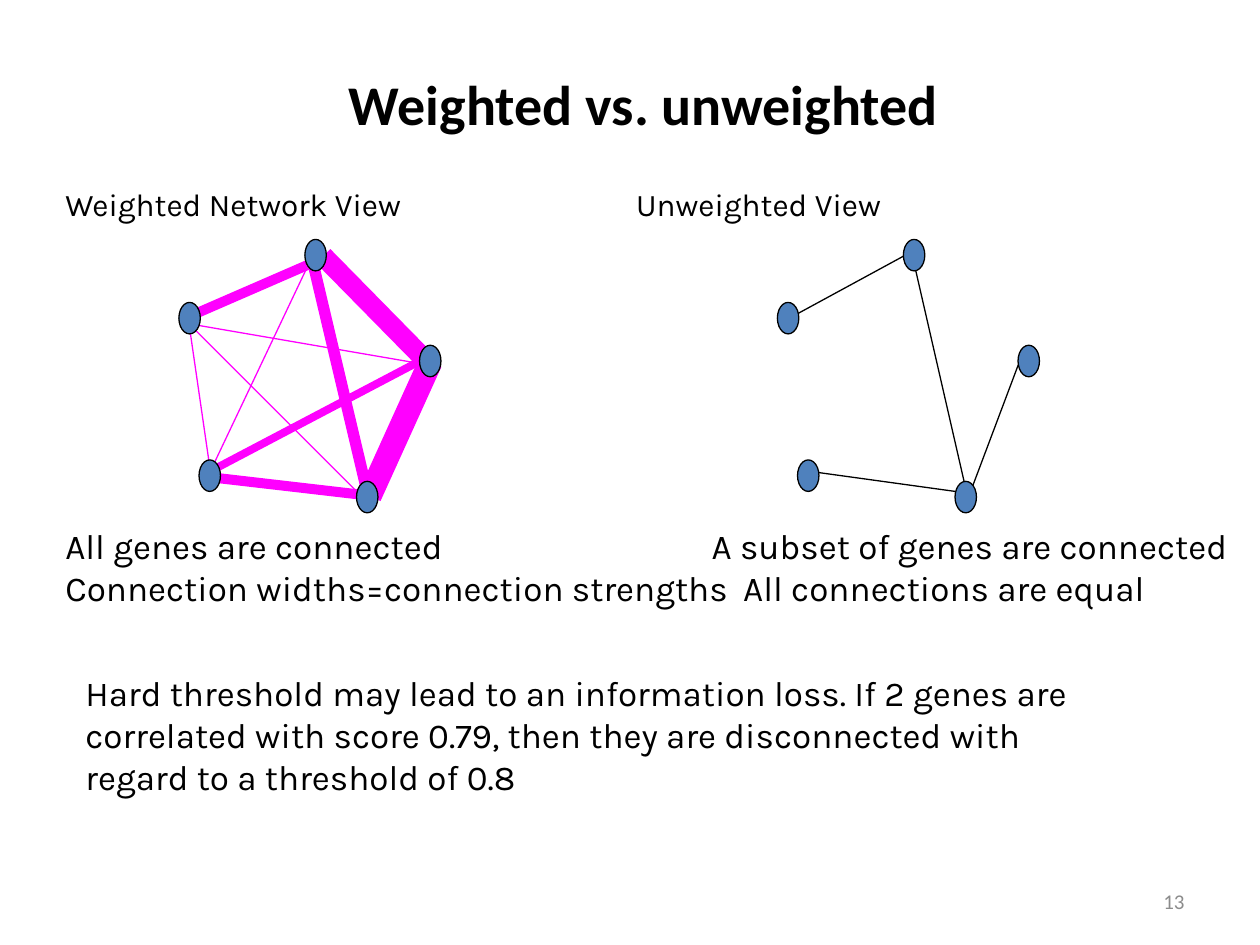
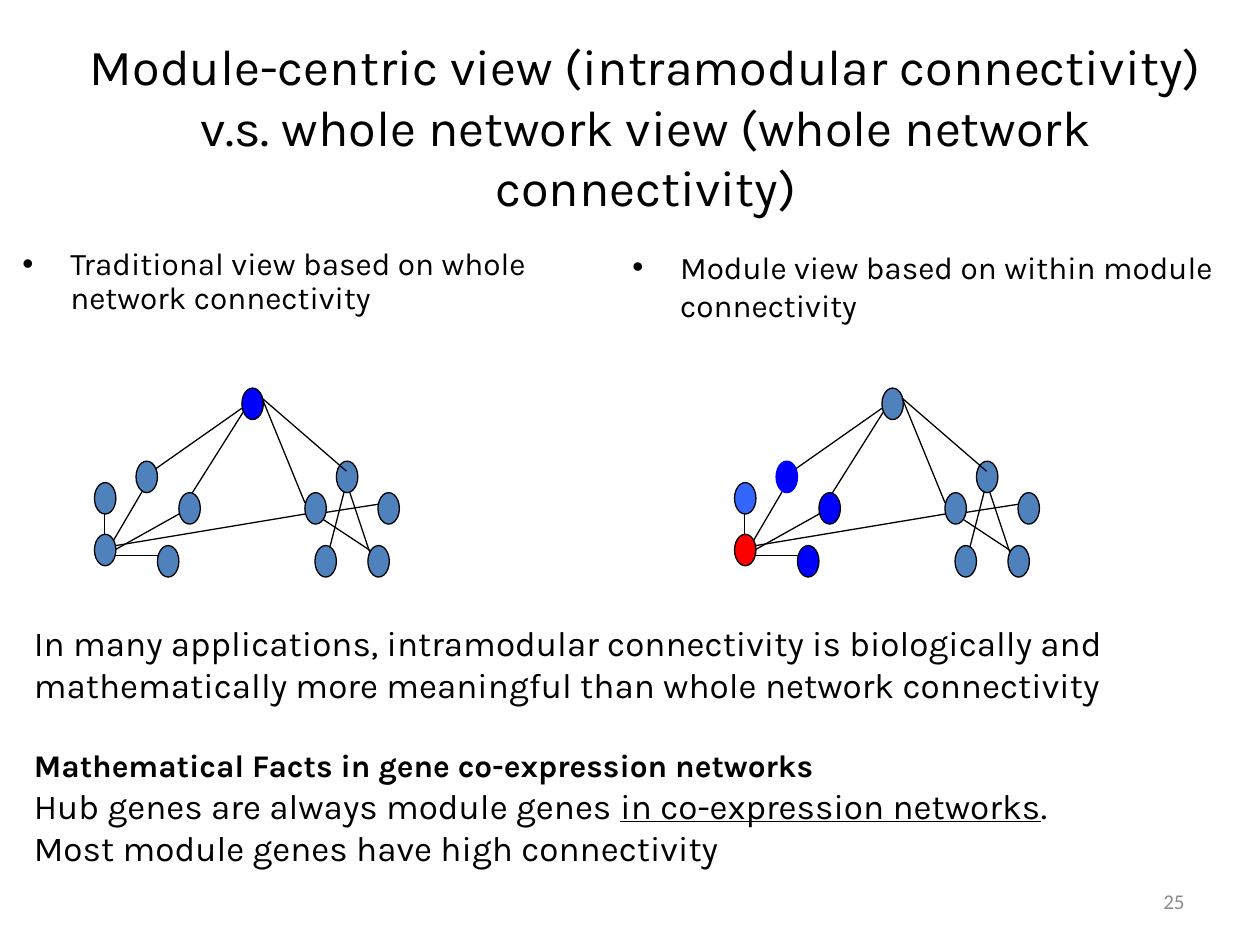
"""Build two slides on weighted networks and module-centric connectivity."""
from lxml import etree
from pptx import Presentation
from pptx.dml import color
from pptx.enum import shapes, text
from pptx.oxml import ns
from pptx.util import Inches, Pt

BLACK, GRAY, STEEL = "000000", "8C8C8C", "4F81BD"
PINK, BLUE, SKY, RED = "FF00FF", "0000FF", "3366FF", "FF0000"
hue = color.RGBColor.from_string


def write(slide, box, rows, size, font="Karla", tone=BLACK, align=None,
          anchor=text.MSO_ANCHOR.TOP, bullet=False):
    """Add a text box with one paragraph per row and return its paragraphs."""
    frame = slide.shapes.add_textbox(*map(Inches, box)).text_frame
    frame.word_wrap = True
    frame.vertical_anchor = anchor
    for i, row in enumerate(rows):
        para = frame.add_paragraph() if i else frame.paragraphs[0]
        para.text = row
        para.alignment = align
        if bullet:
            props = para._p.get_or_add_pPr()
            props.set("marL", str(Inches(0.38)))
            props.set("indent", str(-Inches(0.38)))
            etree.SubElement(props, ns.qn("a:buFont")).set("typeface", "Arial")
            etree.SubElement(props, ns.qn("a:buChar")).set("char", "•")
        para.font.name = font
        para.font.size = Pt(size)
        para.font.color.rgb = hue(tone)
    return frame.paragraphs


def link(slide, dx, ends, tone, width=0.75):
    """Draw a straight edge moved right by dx."""
    x1, y1, x2, y2 = ends
    edge = slide.shapes.add_connector(
        shapes.MSO_CONNECTOR.STRAIGHT,
        *map(Inches, (x1 + dx, y1, x2 + dx, y2)))
    edge.line.color.rgb = hue(tone)
    edge.line.width = Pt(width)
    etree.SubElement(edge._element.spPr, ns.qn("a:effectLst"))


deck = Presentation()
deck.slide_width, deck.slide_height = Inches(10), Inches(7.5)
first, second = [deck.slides.add_slide(deck.slide_layouts[6]) for _ in range(2)]

genes = [(1.42, 2.4), (2.83, 3.82), (1.58, 3.65), (3.33, 2.74), (2.42, 1.9)]
thin = [(1.5, 2.57, 1.67, 3.74), (1.5, 2.57, 2.92, 3.99),
        (1.5, 2.57, 3.42, 2.9), (1.67, 3.74, 2.5, 1.99)]
bars = [(1.5, 2.24, 1.07, 0.08, 336.5), (2.39, 2.37, 1.17, 0.16, 45.5),
        (1.68, 3.82, 1.23, 0.08, 6.6), (1.72, 3.02, 1.99, 0.09, 76.7),
        (2.59, 3.31, 1.17, 0.19, 114.4)]
kept = [(1.67, 3.74, 2.83, 3.9), (3.33, 2.9, 2.92, 3.99),
        (1.58, 2.49, 2.5, 1.99), (2.5, 2.07, 2.92, 3.9)]

hubs = [(0.75, 4.24), (0.75, 3.83), (1.08, 3.66), (1.25, 4.33), (1.42, 3.91),
        (2.42, 3.91), (2.92, 4.33), (2.5, 4.33), (2.67, 3.66), (3, 3.91),
        (1.92, 3.08)]
under = [(2.75, 3.83, 2.58, 4.49), (2.5, 4.08, 3.08, 3.99),
         (2.75, 3.83, 3, 4.58), (2.5, 4.08, 3, 4.41),
         (0.83, 4.41, 1.33, 4.41), (0.83, 4.41, 0.83, 3.99),
         (2, 3.16, 1.42, 4.08), (1.92, 3.24, 1.08, 3.83),
         (0.83, 4.41, 1.17, 3.83), (0.83, 4.41, 1.42, 4.08)]
over = [(2.08, 3.16, 2.75, 3.74), (2.08, 3.16, 2.42, 3.99),
        (0.92, 4.33, 2.42, 4.08)]
whole = {10: (BLUE, BLACK)}
module = {0: (RED, BLACK), 1: (SKY, BLACK), 2: (BLUE, BLUE),
          3: (BLUE, BLACK), 4: (BLUE, BLACK)}

link(first, 0, (1.67, 3.74, 3.42, 2.82), PINK, 4.5)
graphs = [
    (first, 0, PINK, thin, bars, genes, {}, []),
    (first, 4.75, BLACK, kept, [], genes, {}, []),
    (second, 0, BLACK, under, [], hubs, whole, over),
    (second, 5.08, BLACK, under, [], hubs, module, over),
]
for slide, dx, tone, back, beams, nodes, marks, front in graphs:
    for ends in back:
        link(slide, dx, ends, tone)
    for *box, turn in beams:
        bar = slide.shapes.add_shape(
            shapes.MSO_SHAPE.RECTANGLE, *map(Inches, box))
        bar.rotation = turn
        bar.shadow.inherit = False
        bar.fill.solid()
        bar.fill.fore_color.rgb = hue(tone)
        bar.line.fill.background()
    for i, (x, y) in enumerate(nodes):
        fill, rim = marks.get(i, (STEEL, BLACK))
        node = slide.shapes.add_shape(
            shapes.MSO_SHAPE.OVAL, *map(Inches, (x + dx, y, 0.17, 0.25)))
        node.shadow.inherit = False
        node.fill.solid()
        node.fill.fore_color.rgb = hue(fill)
        node.line.color.rgb = hue(rim)
        node.line.width = Pt(0.75)
    for ends in front:
        link(slide, dx, ends, tone)

title = write(first, (2.67, 0.5, 4.92, 0.64), ["Weighted vs. unweighted"], 32,
              "Calibri")
title[0].font.bold = True
write(first, (0.42, 1.42, 4, 0.4), ["Weighted Network View"], 18)
write(first, (4.95, 1.42, 4, 0.4), ["Unweighted View"], 18)
write(first, (0.42, 4.11, 5.6, 0.77),
      ["All genes are connected", "Connection widths=connection strengths"], 20)
notes = write(first, (5.55, 4.11, 4.45, 0.77),
              ["A subset of genes are connected", "All connections are equal"], 20)
notes[1]._p.get_or_add_pPr().set("marL", str(Inches(0.25)))
write(first, (0.58, 5.28, 8.5, 1.11),
      ["Hard threshold may lead to an information loss. If 2 genes are "
       "correlated with score 0.79, then they are disconnected with regard "
       "to a threshold of 0.8"], 20)

write(second, (0.25, 0.25, 9.75, 1.5),
      ["Module-centric view (intramodular connectivity)\v"
       "v.s. whole network view (whole network connectivity)"], 28.8,
      align=text.PP_ALIGN.CENTER, anchor=text.MSO_ANCHOR.MIDDLE)
views = write(second, (0.08, 1.92, 5, 1.08),
              ["Traditional view based on whole network connectivity"], 18,
              bullet=True)
views[0].line_spacing = 0.9
write(second, (4.92, 1.92, 5, 1.08),
      ["Module view based on within module connectivity"], 18, bullet=True)
facts = write(second, (0.17, 4.88, 9.75, 2.4),
              ["In many applications, intramodular connectivity is biologically "
               "and mathematically more meaningful than whole network connectivity",
               "Mathematical Facts in gene co-expression networks",
               "Hub genes are always module genes ",
               "Most module genes have high connectivity"], 20)
facts[1].space_before = Pt(23.5)
facts[1].font.size = Pt(18)
facts[1].font.bold = True
for words, lined in [("in co-expression networks", True), (".", None)]:
    run = facts[2].add_run()
    run.text = words
    run.font.underline = lined

for slide, page in [(first, "13"), (second, "25")]:
    write(slide, (7.17, 6.95, 2.33, 0.4), [page], 12, "Calibri", GRAY,
          text.PP_ALIGN.RIGHT, text.MSO_ANCHOR.MIDDLE)

deck.save("out.pptx")
